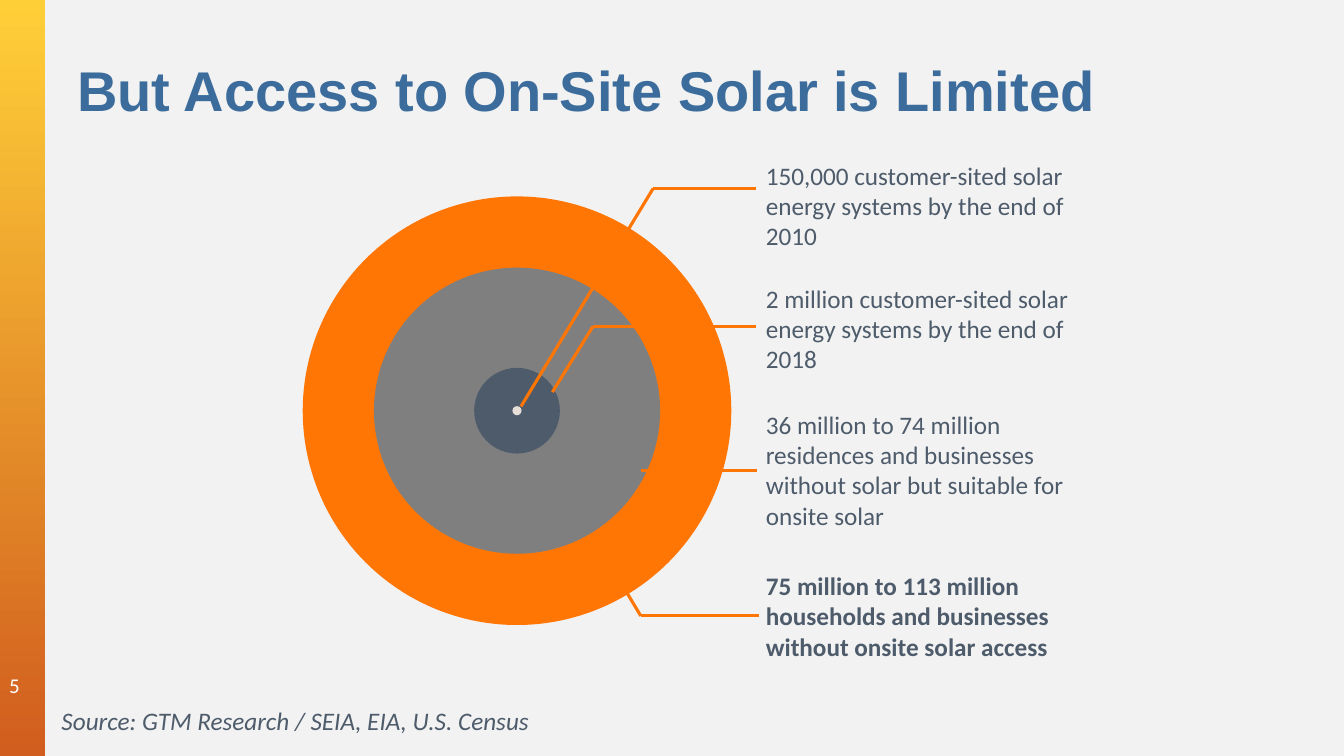
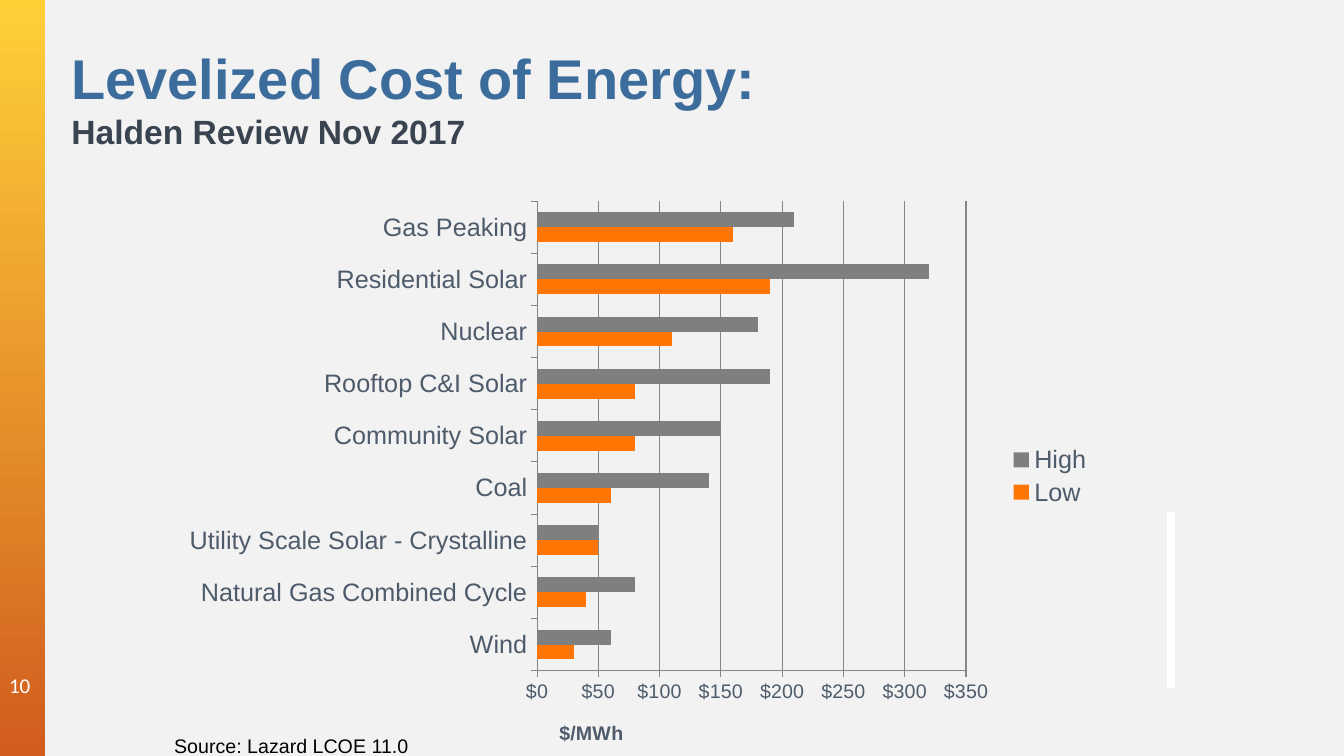
import pptx
import pptx.chart.data
import pptx.dml.color
import pptx.enum.chart
import pptx.enum.shapes
import pptx.enum.text
import pptx.oxml.ns
import pptx.oxml.xmlchemy
import pptx.util
from pptx.util import Cm

BACKGROUND = "F2F2F2"
BAND_TOP, BAND_BOTTOM = "FFCF38", "D15D1E"
TITLE_BLUE, SUBTITLE_COLOUR = "3C6C9B", "3A4450"
SLATE, ORANGE, GRAY, SAND = "4D5B6B", "FF7605", "7F7F7F", "E8DED8"
AXIS_GRAY, WHITE, BLACK = "868686", "FFFFFF", "000000"

CIRCLE_CENTER = (13.03, 10.35)
CALLOUT_LEFT, CALLOUT_WIDTH = 19.05, 8.64
# From the outer circle to the inner one; leader points run from circle to text.
CALLOUTS = [
    {"diameter": 10.8, "colour": ORANGE, "top": 14.25, "height": 2.57, "bold": True,
     "text": "75 million to 113 million households and businesses without onsite solar access",
     "leader": [(15.8, 14.94), (16.15, 15.52), (19.13, 15.52)]},
    {"diameter": 7.21, "colour": GRAY, "top": 10.19, "height": 3.33, "bold": False,
     "text": "36 million to 74 million residences and businesses without solar "
             "but suitable for onsite solar",
     "leader": [(16.15, 11.86), (19.08, 11.86)]},
    {"diameter": 2.16, "colour": SLATE, "top": 7.01, "height": 2.57, "bold": False,
     "text": "2 million customer-sited solar energy systems by the end of 2018",
     "leader": [(13.92, 9.88), (14.94, 8.23), (19.05, 8.23)]},
    {"diameter": 0.23, "colour": SAND, "top": 3.91, "height": 2.57, "bold": False,
     "text": "150,000 customer-sited solar energy systems by the end of 2010",
     "leader": [(13.13, 10.24), (16.46, 4.75), (19.05, 4.75)]},
]

# Energy source, low and high cost in $/MWh, from the bottom bar upwards.
ENERGY_COSTS = [
    ("Wind", 30, 60),
    ("Natural Gas Combined Cycle", 40, 80),
    ("Utility Scale Solar - Crystalline", 50, 50),
    ("Coal", 60, 140),
    ("Community Solar", 80, 150),
    ("Rooftop C&I Solar", 80, 190),
    ("Nuclear", 110, 180),
    ("Residential Solar", 190, 320),
    ("Gas Peaking", 160, 210),
]


def rgb(colour):
    return pptx.dml.color.RGBColor.from_string(colour)


def new_element(tag):
    return pptx.oxml.xmlchemy.OxmlElement(tag)


def set_font(font, size, colour, name="Arial", bold=False, italic=False):
    font.name, font.size, font.bold, font.italic = name, pptx.util.Pt(size), bold, italic
    font.color.rgb = rgb(colour)


def add_shape(shapes, kind, left, top, width, height, colour=None):
    shape = shapes.add_shape(kind, Cm(left), Cm(top), Cm(width), Cm(height))
    shape.shadow.inherit = False
    shape.line.fill.background()
    if colour:
        shape.fill.solid()
        shape.fill.fore_color.rgb = rgb(colour)
    return shape


def add_text(shapes, left, top, width, height, lines):
    """Add a text box; each line is a text and its set_font options."""
    box = shapes.add_textbox(Cm(left), Cm(top), Cm(width), Cm(height))
    frame = box.text_frame
    frame.word_wrap = True
    for index, (text, style) in enumerate(lines):
        paragraph = frame.add_paragraph() if index else frame.paragraphs[0]
        paragraph.text = text
        set_font(paragraph.font, **style)
    return frame


def add_line(shapes, start, end):
    connector = shapes.add_connector(
        pptx.enum.shapes.MSO_CONNECTOR.STRAIGHT, *(Cm(value) for value in start + end))
    connector.line.color.rgb = rgb(ORANGE)
    connector.line.width = pptx.util.Pt(2.25)
    connector._element.spPr.append(new_element("a:effectLst"))


def add_slide(presentation, number):
    """Add a blank slide with the gradient band and its slide number."""
    slide = presentation.slides.add_slide(presentation.slide_layouts[6])
    band = add_shape(slide.shapes, pptx.enum.shapes.MSO_SHAPE.RECTANGLE, 0, 0, 1.13, 19.05)
    band.fill.gradient()
    band.fill.gradient_angle = 270
    for stop, position, colour in zip(band.fill.gradient_stops, (0, 1), (BAND_TOP, BAND_BOTTOM)):
        stop.position = position
        stop.color.rgb = rgb(colour)
    frame = add_text(slide.shapes, -0.1, 16.59, 1.42, 1.35,
                     [(number, {"size": 15, "colour": WHITE, "name": "Calibri"})])
    frame.margin_left = frame.margin_right = Cm(0.33)
    frame.vertical_anchor = pptx.enum.text.MSO_ANCHOR.MIDDLE
    return slide


def add_title(slide, left, top, width, height, title, subtitle=None):
    lines = [(title, {"size": 40, "colour": TITLE_BLUE, "bold": True})]
    if subtitle:
        lines.append((subtitle, {"size": 24, "colour": SUBTITLE_COLOUR, "bold": True}))
    add_text(slide.shapes, left, top, width, height, lines)


def place_in_chart(element, predecessor, **fractions):
    """Give a chart part a fixed place, in fractions of the chart, after its predecessor."""
    qualified = pptx.oxml.ns.qn
    for old_layout in element.findall(qualified("c:layout")):
        element.remove(old_layout)
    layout = new_element("c:layout")
    manual = new_element("c:manualLayout")
    layout.append(manual)
    settings = {"xMode": "edge", "yMode": "edge", **fractions}
    if predecessor is None:
        settings = {"layoutTarget": "inner", **settings}
        element.insert(0, layout)
    else:
        element.find(qualified(predecessor)).addnext(layout)
    for name, value in settings.items():
        setting = new_element("c:" + name)
        setting.set("val", str(value))
        manual.append(setting)


def add_cost_chart(slide):
    names, low, high = zip(*ENERGY_COSTS)
    data = pptx.chart.data.CategoryChartData()
    data.categories = names
    data.add_series("Low", low)
    data.add_series("High", high)
    chart = slide.shapes.add_chart(
        pptx.enum.chart.XL_CHART_TYPE.BAR_CLUSTERED,
        Cm(4.37), Cm(4.78), Cm(23.5), Cm(14.43), data).chart
    chart.has_title = False
    set_font(chart.font, 10, SLATE)

    plot = chart.plots[0]
    plot.gap_width, plot.overlap, plot.vary_by_categories = 150, 0, False
    for series, colour in zip(plot.series, (ORANGE, GRAY)):
        series.format.fill.solid()
        series.format.fill.fore_color.rgb = rgb(colour)

    categories, values = chart.category_axis, chart.value_axis
    for axis, size in ((categories, 18), (values, 14)):
        set_font(axis.tick_labels.font, size, SLATE)
        axis.major_tick_mark = pptx.enum.chart.XL_TICK_MARK.OUTSIDE
        axis.format.line.color.rgb = rgb(AXIS_GRAY)
    categories.has_major_gridlines = False
    values.has_major_gridlines = True
    values.major_gridlines.format.line.color.rgb = rgb(AXIS_GRAY)
    values.minimum_scale, values.maximum_scale, values.major_unit = 0, 350, 50
    values.tick_labels.number_format = '"$"#,##0'
    values.tick_labels.number_format_is_linked = False
    caption = values.axis_title.text_frame.paragraphs[0]
    caption.text = "$/MWh"
    set_font(caption.font, 14, SLATE, bold=True)

    chart.has_legend = True
    chart.legend.position = pptx.enum.chart.XL_LEGEND_POSITION.RIGHT
    chart.legend.include_in_layout = False
    set_font(chart.legend.font, 18, SLATE)

    plot_area = chart._chartSpace.chart.plotArea
    place_in_chart(plot_area, None, x=0.39, y=0.02, w=0.46, h=0.82)
    place_in_chart(values.axis_title._element, "c:tx", x=0.41, y=0.92)
    place_in_chart(chart.legend._element, "c:legendPos", x=0.89, y=0.44, w=0.1, h=0.12)


def build_access_slide(presentation):
    slide = add_slide(presentation, "5")
    for callout in CALLOUTS:
        shapes = slide.shapes.add_group_shape().shapes
        diameter = callout["diameter"]
        left, top = (center - diameter / 2 for center in CIRCLE_CENTER)
        add_shape(shapes, pptx.enum.shapes.MSO_SHAPE.OVAL,
                  left, top, diameter, diameter, callout["colour"])
        style = {"size": 18, "colour": SLATE, "name": "Calibri", "bold": callout["bold"]}
        add_text(shapes, CALLOUT_LEFT, callout["top"], CALLOUT_WIDTH, callout["height"],
                 [(callout["text"], style)])
        leader = callout["leader"]
        for start, end in zip(leader, leader[1:]):
            add_line(shapes, start, end)
    add_text(slide.shapes, 1.3, 17.65, 14.5, 0.89,
             [("Source: GTM Research / SEIA, EIA, U.S. Census",
               {"size": 18, "colour": SLATE, "name": "Calibri", "italic": True})])
    add_title(slide, 1.7, 1.27, 27.66, 3.18, "But Access to On-Site Solar is Limited")


def build_cost_slide(presentation):
    slide = add_slide(presentation, "10")
    add_shape(slide.shapes, pptx.enum.shapes.MSO_SHAPE.RECTANGLE, 29.41, 12.9, 0.2, 4.45, WHITE)
    add_text(slide.shapes, 4.14, 18.36, 16.61, 0.84,
             [("Source: Lazard LCOE 11.0", {"size": 14, "colour": BLACK})])
    add_title(slide, 1.55, 0.97, 25.45, 3, "Levelized Cost of Energy:", "Halden Review Nov 2017")
    add_cost_chart(slide)


def main():
    presentation = pptx.Presentation()
    presentation.slide_width, presentation.slide_height = Cm(33.87), Cm(19.05)
    background = presentation.slide_master.background.fill
    background.solid()
    background.fore_color.rgb = rgb(BACKGROUND)
    build_access_slide(presentation)
    build_cost_slide(presentation)
    presentation.save("out.pptx")


if __name__ == "__main__":
    main()
